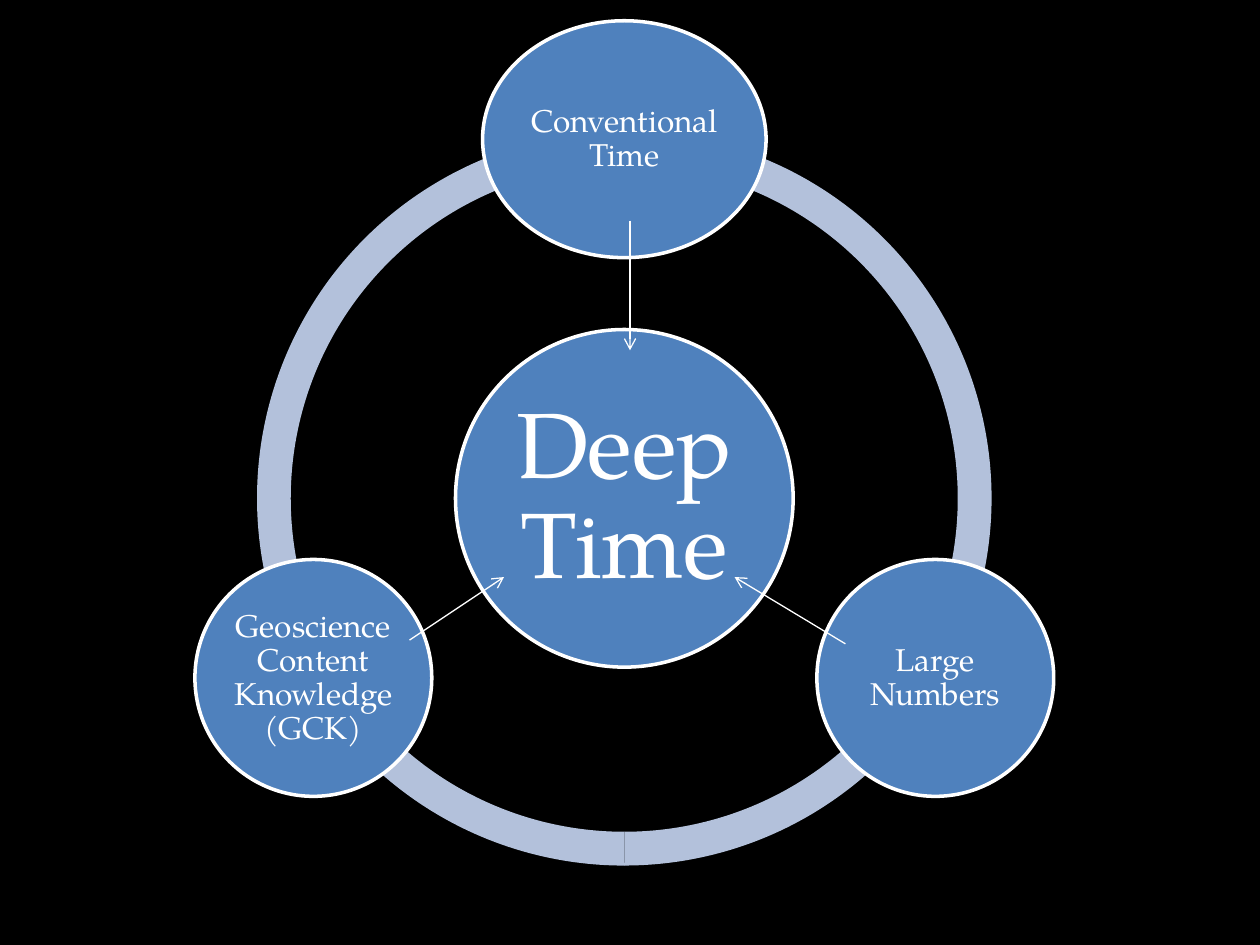
from math import cos, radians, sin

from lxml.etree import SubElement
from pptx import Presentation
from pptx.dml.color import RGBColor
from pptx.enum.shapes import MSO_CONNECTOR, MSO_SHAPE
from pptx.enum.text import MSO_ANCHOR, PP_ALIGN
from pptx.oxml.ns import qn
from pptx.util import Inches, Pt

COLORS = {"background": "000000", "ring": "B3C1DB", "circle": "4F81BD", "white": "FFFFFF"}
FONT = "TeX Gyre Pagella"
CENTER_X, CENTER_Y = 4.955, 3.955
ORBIT = 2.85


class CycleDiagram:
    """Holds the slide and the style of the diagram's elements."""

    def __init__(self, slide):
        self.slide = slide
        self.fill(slide.background.fill, "background")

    def fill(self, fill, color):
        fill.solid()
        fill.fore_color.rgb = RGBColor.from_string(COLORS[color])

    def outline(self, line, width):
        self.fill(line.fill, "white")
        line.width = Pt(width)

    def centered_shape(self, kind, x, y, width, height, color):
        shape = self.slide.shapes.add_shape(
            kind, Inches(x - width / 2), Inches(y - height / 2), Inches(width), Inches(height))
        shape.shadow.inherit = False
        self.fill(shape.fill, color)
        return shape

    def arc(self, start, end, size=5.83, thickness=0.046):
        shape = self.centered_shape(MSO_SHAPE.BLOCK_ARC, CENTER_X, CENTER_Y, size, size, "ring")
        shape.line.fill.background()
        # Angles are stored in 60000ths of a degree, adjustments in 100000ths
        for index, value in enumerate((start * 0.6, end * 0.6, thickness)):
            shape.adjustments[index] = value

    def circle(self, text, x, y, width, height, size, inset):
        shape = self.centered_shape(MSO_SHAPE.OVAL, x, y, width, height, "circle")
        self.outline(shape.line, 2)
        frame = shape.text_frame
        frame.word_wrap = True
        frame.vertical_anchor = MSO_ANCHOR.MIDDLE
        frame.margin_left = frame.margin_right = Inches(inset)
        frame.margin_top = frame.margin_bottom = Inches(inset)
        paragraph = frame.paragraphs[0]
        paragraph.text = text
        paragraph.alignment = PP_ALIGN.CENTER
        paragraph.line_spacing = 0.9
        paragraph.font.name = FONT
        paragraph.font.size = Pt(size)
        paragraph.font.color.rgb = RGBColor.from_string(COLORS["white"])

    def arrow(self, start, end):
        connector = self.slide.shapes.add_connector(
            MSO_CONNECTOR.STRAIGHT, *(Inches(value) for value in (*start, *end)))
        self.outline(connector.line, 0.75)
        SubElement(connector.line._get_or_add_ln(), qn("a:tailEnd"), type="arrow")
        SubElement(connector._element.spPr, qn("a:effectLst"))


def main():
    presentation = Presentation()
    presentation.slide_width, presentation.slide_height = Inches(10), Inches(7.5)
    diagram = CycleDiagram(presentation.slides.add_slide(presentation.slide_layouts[6]))

    # Ring in three segments
    for start, end in ((90, 162), (18, 90), (162, 18)):
        diagram.arc(start, end)

    # Central idea
    diagram.circle("Deep Time", CENTER_X, CENTER_Y, 2.68, 2.68, 53, 0.07)

    # Contributing ideas, 120 degrees apart on the orbit
    ideas = (("Conventional Time", 2.25), ("Large Numbers", 1.88),
             ("Geoscience Content Knowledge (GCK)", 1.88))
    for index, (text, width) in enumerate(ideas):
        angle = radians(-90 + 120 * index)
        diagram.circle(text, CENTER_X + ORBIT * cos(angle), CENTER_Y + ORBIT * sin(angle),
                       width, 1.88, 18, 0.03)

    # Arrows pointing to the central idea
    for start, end in (((5, 1.75), (5, 2.78)),
                       ((3.25, 5.08), (4, 4.58)),
                       ((6.71, 5.11), (5.83, 4.58))):
        diagram.arrow(start, end)

    presentation.save("out.pptx")


if __name__ == "__main__":
    main()
